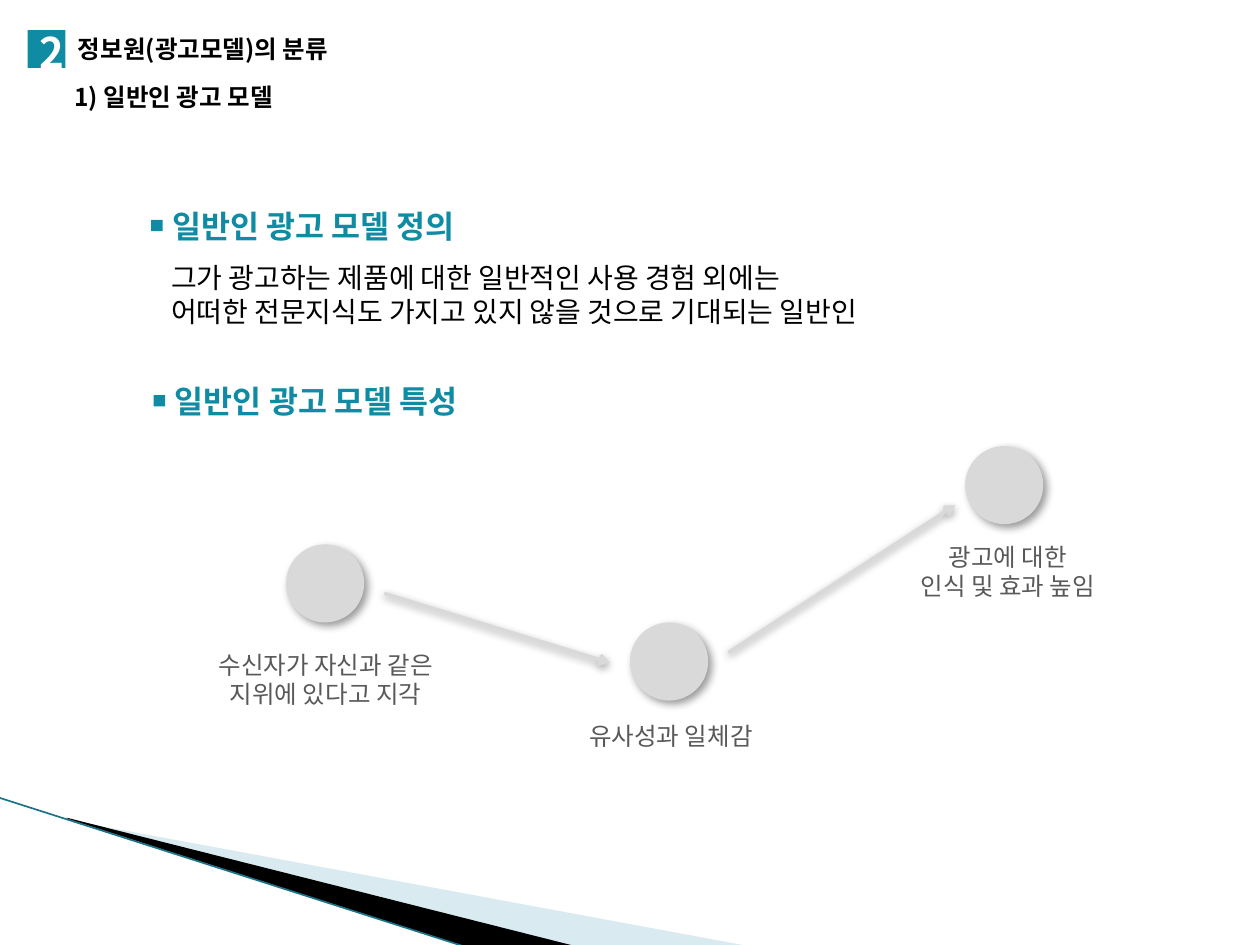
from dataclasses import dataclass

import pptx
import pptx.dml.color
import pptx.enum.shapes
import pptx.enum.text
import pptx.oxml
import pptx.oxml.ns
import pptx.util

SHAPE = pptx.enum.shapes.MSO_SHAPE
ALIGN = pptx.enum.text.PP_ALIGN
COLS, ROWS = 100, 75
CELL = pptx.util.Inches(0.1)


@dataclass(frozen=True)
class Theme:
    font: str = "Noto Sans CJK KR"
    accent: str = "108BA4"
    ink: str = "000000"
    paper: str = "FFFFFF"
    muted: str = "595959"
    node: str = "D9D9D9"
    wedge: str = "A0CBDC"
    edge: str = "1A7387"
    number: int = 24
    heading: int = 18
    body: int = 16
    label: int = 14


THEME = Theme()


def grid(*cells):
    return [round(c * CELL) for c in cells]


def rgb(color):
    return pptx.dml.color.RGBColor.from_string(color)


def xml(tag, attrs="", inner=""):
    ns = pptx.oxml.ns.nsdecls("a")
    return pptx.oxml.parse_xml(f"<a:{tag} {ns} {attrs}>{inner}</a:{tag}>")


def add_shadow(sp, alpha, blur, dist, angle):
    blur, dist = pptx.util.Pt(blur), pptx.util.Pt(dist)
    effects = xml("effectLst", inner=(
        f'<a:outerShdw blurRad="{blur}" dist="{dist}" dir="{angle * 60000}" '
        f'algn="tl" rotWithShape="0"><a:srgbClr val="{THEME.ink}">'
        f'<a:alpha val="{alpha * 1000}"/></a:srgbClr></a:outerShdw>'))
    sp._element.spPr.append(effects)


def paint(sp, color, alpha=None):
    sp.fill.solid()
    sp.fill.fore_color.rgb = rgb(color)
    sp.line.fill.background()
    if alpha is not None:
        clr = sp._element.spPr.find(".//" + pptx.oxml.ns.qn("a:srgbClr"))
        clr.append(xml("alpha", f'val="{alpha * 1000}"'))


def add_text(shapes, box, lines, size, color, bold=False, align=ALIGN.LEFT,
             wrap=False, inset=True):
    sp = shapes.add_textbox(*grid(*box))
    tf = sp.text_frame
    tf.word_wrap = wrap
    tf.auto_size = pptx.enum.text.MSO_AUTO_SIZE.SHAPE_TO_FIT_TEXT
    if not inset:
        tf.margin_left = tf.margin_top = tf.margin_right = tf.margin_bottom = 0
    for i, line in enumerate(lines):
        p = tf.add_paragraph() if i else tf.paragraphs[0]
        p.alignment = align
        r = p.add_run()
        r.text = line
        r.font.size = pptx.util.Pt(size)
        r.font.bold = bold
        r.font.color.rgb = rgb(color)
        r.font.name = THEME.font
        r._r.rPr.append(xml("ea", f'typeface="{THEME.font}"'))


def add_square(shapes, x, y, side):
    sp = shapes.add_shape(SHAPE.RECTANGLE, *grid(x, y, side, side))
    sp.shadow.inherit = False
    paint(sp, THEME.accent)


def add_wedge(shapes, points, color, alpha=None):
    start, *rest = [grid(*point) for point in points]
    builder = shapes.build_freeform(*start, scale=1.0)
    builder.add_line_segments(rest, close=True)
    sp = builder.convert_to_shape()
    sp.shadow.inherit = False
    paint(sp, color, alpha)


def add_line(shapes, start, end, color, width):
    sp = shapes.add_connector(
        pptx.enum.shapes.MSO_CONNECTOR.STRAIGHT, *grid(*start, *end))
    sp.line.color.rgb = rgb(color)
    sp.line.width = pptx.util.Pt(width)
    return sp


def add_arrow(shapes, start, end):
    sp = add_line(shapes, start, end, THEME.node, 2)
    sp.line._get_or_add_ln().append(xml("tailEnd", 'type="arrow"'))
    add_shadow(sp, 38, 5, 1.6, 90)


def add_node(shapes, x, y, box, lines):
    sp = shapes.add_shape(SHAPE.OVAL, *grid(x, y, 6.2, 6.2))
    paint(sp, THEME.node)
    add_shadow(sp, 40, 5, 3, 45)
    add_text(shapes, box, lines, THEME.label, THEME.muted, align=ALIGN.CENTER)


def add_heading(shapes, x, y, text):
    add_text(shapes, (x, y, 37.2, 4), [text], THEME.heading, THEME.accent,
             bold=True, wrap=True)
    add_square(shapes, x - 0.7, y + 1.55, 0.9)


def add_backdrop(shapes):
    add_wedge(shapes, [(5.5, 65.1), (59.5, 75.1), (45.6, 75.1), (5.5, 65)],
              THEME.wedge, 40)
    add_wedge(shapes, [(5.3, 64.9), (45.7, 75.1), (37.2, 75.2), (5.4, 65)],
              THEME.ink)
    sp = add_line(shapes, (-0.1, 63.3), (37.1, 75.2), THEME.edge, 0.95)
    sp._element.spPr.append(xml("effectLst"))


def add_title(shapes):
    group = shapes.add_group_shape().shapes
    add_text(group, (5.2, 2.2, 27.1, 3.4), ["정보원(광고모델)의 분류"],
             THEME.label, THEME.ink, bold=True, wrap=True)
    add_square(group, 2.2, 2.4, 3)
    add_text(group, (3.1, 2.1, 1.9, 4), ["2"], THEME.number, THEME.paper,
             bold=True, wrap=True, inset=False)
    add_text(shapes, (4.9, 6, 18.4, 3.4), ["1) 일반인 광고 모델"],
             THEME.label, THEME.ink, bold=True)


def main():
    prs = pptx.Presentation()
    prs.slide_width, prs.slide_height = grid(COLS, ROWS)
    shapes = prs.slides.add_slide(prs.slide_layouts[6]).shapes
    add_backdrop(shapes)
    add_title(shapes)
    add_heading(shapes, 12.7, 15.9, "일반인 광고 모델 정의")
    add_text(shapes, (12.6, 20.2, 59.1, 6.4),
             ["그가 광고하는 제품에 대한 일반적인 사용 경험 외에는",
              "어떠한 전문지식도 가지고 있지 않을 것으로 기대되는 일반인"],
             THEME.body, THEME.ink)
    add_heading(shapes, 12.9, 29.8, "일반인 광고 모델 특성")
    add_node(shapes, 22.7, 43.2, (16, 51.1, 19.7, 5.7),
             ["수신자가 자신과 같은", "지위에 있다고 지각"])
    add_node(shapes, 50, 49.4, (45.5, 56.7, 15.5, 3.4), ["유사성과 일체감"])
    add_node(shapes, 76.6, 35.4, (71.7, 42.5, 16.6, 5.7),
             ["광고에 대한", "인식 및 효과 높임"])
    add_arrow(shapes, (30.5, 47.1), (48.4, 52.6))
    add_arrow(shapes, (57.8, 51.8), (75.8, 40.1))
    prs.save("out.pptx")


if __name__ == "__main__":
    main()
